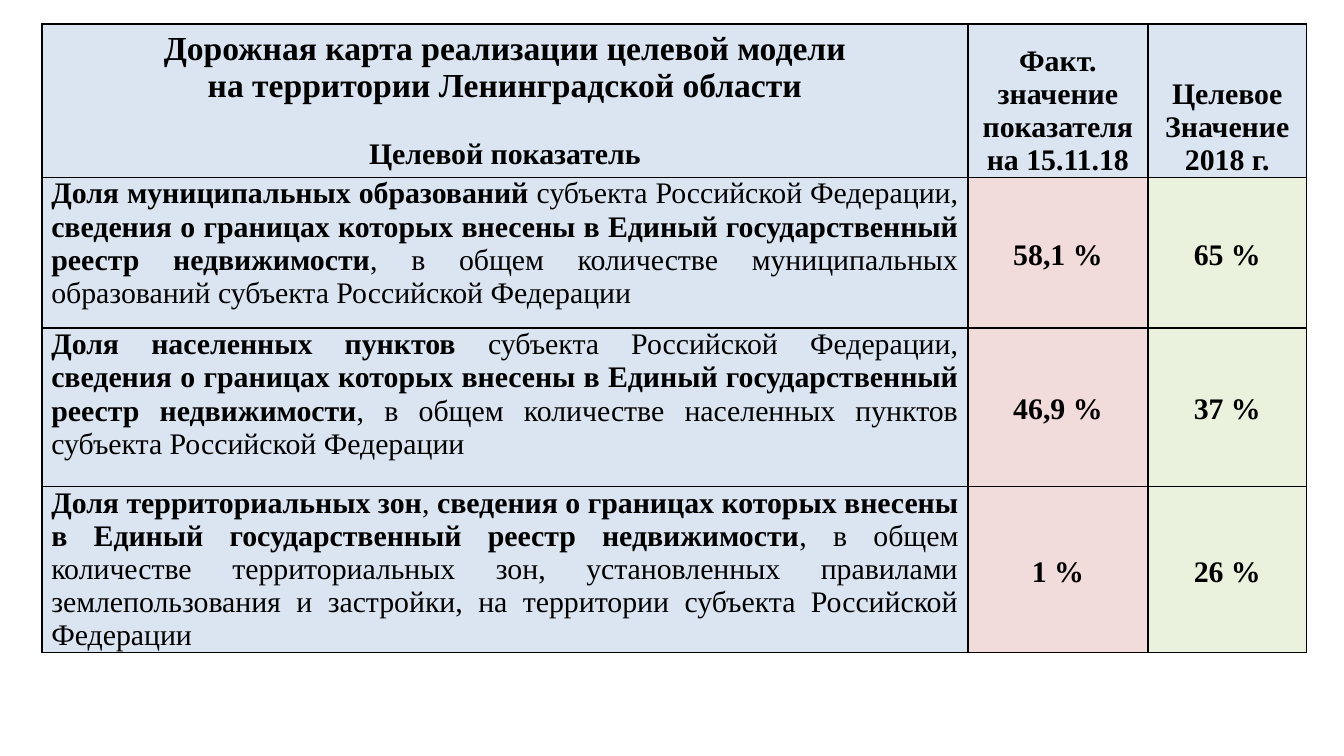
from dataclasses import dataclass

from lxml import etree
from pptx import Presentation
from pptx import util as u
from pptx.dml.color import RGBColor
from pptx.enum import text
from pptx.oxml import ns

BLACK = RGBColor(0x00, 0x00, 0x00)
BLUE = RGBColor(0xDB, 0xE5, 0xF1)
PINK = RGBColor(0xF2, 0xDB, 0xDB)
GREEN = RGBColor(0xEA, 0xF1, 0xDD)

FONT = "Times New Roman"
CENTER = text.PP_ALIGN.CENTER
JUSTIFY = text.PP_ALIGN.JUSTIFY
TOP = text.MSO_ANCHOR.TOP
MIDDLE = text.MSO_ANCHOR.MIDDLE
BOTTOM = text.MSO_ANCHOR.BOTTOM

COLUMN_WIDTHS = (496, 96.5, 85)
ROW_HEIGHTS = (82, 80.75, 85, 88)
REGISTRY = "сведения о границах которых внесены в Единый государственный реестр недвижимости"


@dataclass(frozen=True)
class Run:
    words: str
    bold: bool = True


@dataclass(frozen=True)
class Line:
    runs: tuple[Run, ...]
    size: float = 16
    align: text.PP_ALIGN = CENTER
    spacing: float = 1.0
    before: float = 0


@dataclass(frozen=True)
class CellContent:
    lines: tuple[Line, ...]
    fill: RGBColor
    anchor: text.MSO_ANCHOR = MIDDLE


@dataclass(frozen=True)
class Indicator:
    subject: str
    link: str
    scope: str
    actual: str
    target: str


INDICATORS = (
    Indicator(
        "Доля муниципальных образований ",
        "субъекта Российской Федерации, ",
        ", в общем количестве муниципальных образований субъекта Российской Федерации",
        "58,1 %",
        "65 %",
    ),
    Indicator(
        "Доля населенных пунктов ",
        "субъекта Российской Федерации, ",
        ", в общем количестве населенных пунктов субъекта Российской Федерации",
        "46,9 %",
        "37 %",
    ),
    Indicator(
        "Доля территориальных зон",
        ", ",
        ", в общем количестве территориальных зон, установленных правилами "
        "землепользования и застройки, на территории субъекта Российской Федерации",
        "1 %",
        "26 %",
    ),
)


def bold_line(words: str, size: float = 16, before: float = 0) -> Line:
    return Line((Run(words),), size=size, before=before)


def header_row() -> tuple[CellContent, ...]:
    title = (
        bold_line("Дорожная карта реализации целевой модели", size=18),
        bold_line("на территории Ленинградской области", size=18),
        bold_line("Целевой показатель", before=18),
    )
    actual = ("Факт. значение показателя", "на 15.11.18")
    target = ("Целевое", "Значение", "2018 г.")
    return (
        CellContent(title, BLUE),
        CellContent(tuple(map(bold_line, actual)), BLUE, BOTTOM),
        CellContent(tuple(map(bold_line, target)), BLUE, BOTTOM),
    )


def value_cell(words: str, fill: RGBColor) -> CellContent:
    return CellContent((Line((Run(words),), spacing=1.15),), fill)


def indicator_row(indicator: Indicator) -> tuple[CellContent, ...]:
    runs = (
        Run(indicator.subject),
        Run(indicator.link, bold=False),
        Run(REGISTRY),
        Run(indicator.scope, bold=False),
    )
    return (
        CellContent((Line(runs, align=JUSTIFY),), BLUE, TOP),
        value_cell(indicator.actual, PINK),
        value_cell(indicator.target, GREEN),
    )


def add_borders(cell) -> None:
    properties = cell._tc.get_or_add_tcPr()
    for position, side in enumerate(("lnL", "lnR", "lnT", "lnB")):
        border = etree.Element(ns.qn(f"a:{side}"), w=str(u.Pt(1)))
        fill = etree.SubElement(border, ns.qn("a:solidFill"))
        etree.SubElement(fill, ns.qn("a:srgbClr"), val=str(BLACK))
        properties.insert(position, border)


def write_line(paragraph, line: Line) -> None:
    paragraph.alignment = line.align
    paragraph.line_spacing = line.spacing
    paragraph.space_before = u.Pt(line.before)
    for item in line.runs:
        run = paragraph.add_run()
        run.text = item.words
        run.font.name = FONT
        run.font.size = u.Pt(line.size)
        run.font.bold = item.bold
        run.font.color.rgb = BLACK


def fill_cell(cell, content: CellContent) -> None:
    cell.fill.solid()
    cell.fill.fore_color.rgb = content.fill
    cell.vertical_anchor = content.anchor
    cell.margin_left = cell.margin_right = u.Pt(5)
    cell.margin_top = cell.margin_bottom = u.Pt(0)
    add_borders(cell)
    frame = cell.text_frame
    for index, line in enumerate(content.lines):
        paragraph = frame.add_paragraph() if index else frame.paragraphs[0]
        write_line(paragraph, line)


def add_indicator_table(slide) -> None:
    rows = (header_row(), *map(indicator_row, INDICATORS))
    table = slide.shapes.add_table(
        len(ROW_HEIGHTS), len(COLUMN_WIDTHS),
        u.Pt(22.5), u.Pt(13), u.Pt(sum(COLUMN_WIDTHS)), u.Pt(sum(ROW_HEIGHTS)),
    ).table
    table.first_row = False
    table.horz_banding = False
    for column, width in zip(table.columns, COLUMN_WIDTHS):
        column.width = u.Pt(width)
    for row, height, contents in zip(table.rows, ROW_HEIGHTS, rows):
        row.height = u.Pt(height)
        for cell, content in zip(row.cells, contents):
            fill_cell(cell, content)


def main() -> None:
    presentation = Presentation()
    presentation.slide_width = u.Pt(720)
    presentation.slide_height = u.Pt(405)
    slide = presentation.slides.add_slide(presentation.slide_layouts[6])
    add_indicator_table(slide)
    presentation.save("out.pptx")


if __name__ == "__main__":
    main()
